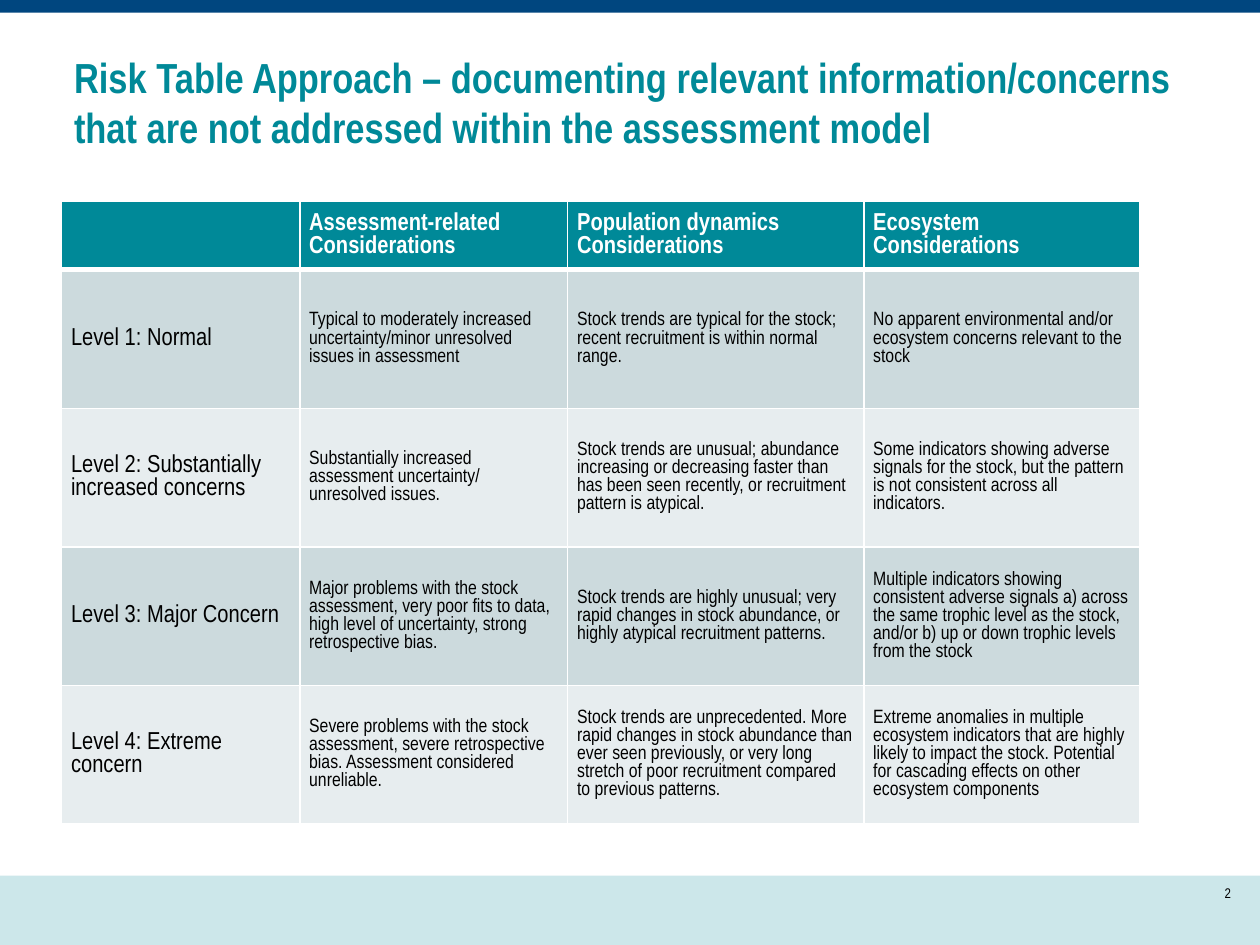
from dataclasses import dataclass

from lxml import etree
from pptx import Presentation
from pptx.dml.color import RGBColor
from pptx.enum import shapes, text
from pptx.oxml import ns
from pptx.util import Pt


@dataclass(frozen=True)
class Theme:
    font: str = "Arial Narrow"
    teal: str = "008998"
    navy: str = "00467F"
    pale: str = "CCE7EA"
    white: str = "FFFFFF"
    black: str = "000000"
    bands: tuple = ("CCDADD", "E7EDEF")
    title: float = 24
    head: float = 14
    body: float = 11
    small: float = 8


THEME = Theme()
WIDTH, HEIGHT = 720, 540
TITLE = ("Risk Table Approach – documenting relevant information/concerns "
         "that are not addressed within the assessment model")
COLS = (136.1, 153.1, 169.2, 157.7)
HEAD_ROW = 38.9
HEADS = ("", "Assessment-related Considerations",
         "Population dynamics Considerations", "Ecosystem Considerations")
LEVELS = (
    ("Level 1: Normal",
     "Typical to moderately increased uncertainty/minor unresolved issues in assessment",
     "Stock trends are typical for the stock; recent recruitment is within normal range.",
     "No apparent environmental and/or ecosystem concerns relevant to the stock"),
    ("Level 2: Substantially increased concerns",
     "Substantially increased assessment uncertainty/ unresolved issues.",
     "Stock trends are unusual; abundance increasing or decreasing faster than "
     "has been seen recently, or recruitment pattern is atypical.",
     "Some indicators showing adverse signals for the stock, but the pattern "
     "is not consistent across all indicators."),
    ("Level 3: Major Concern",
     "Major problems with the stock assessment, very poor fits to data, "
     "high level of uncertainty, strong retrospective bias.",
     "Stock trends are highly unusual; very rapid changes in stock abundance, "
     "or highly atypical recruitment patterns.",
     "Multiple indicators showing consistent adverse signals a) across the same "
     "trophic level as the stock, and/or b) up or down trophic levels from the stock"),
    ("Level 4: Extreme concern",
     "Severe problems with the stock assessment, severe retrospective bias. "
     "Assessment considered unreliable.",
     "Stock trends are unprecedented. More rapid changes in stock abundance than "
     "ever seen previously, or very long stretch of poor recruitment compared "
     "to previous patterns.",
     "Extreme anomalies in multiple ecosystem indicators that are highly likely "
     "to impact the stock. Potential for cascading effects on other ecosystem components"),
)


def points(box):
    return [Pt(side) for side in box]


def paint(fill, color):
    fill.solid()
    fill.fore_color.rgb = RGBColor.from_string(color)


def style(frame, size, color, bold=False):
    for para in frame.paragraphs:
        for run in para.runs:
            font = run.font
            font.name, font.size, font.bold = THEME.font, Pt(size), bold
            font.color.rgb = RGBColor.from_string(color)


def add_band(slide, box, color):
    band = slide.shapes.add_shape(shapes.MSO_SHAPE.RECTANGLE, *points(box))
    band.shadow.inherit = False
    paint(band.fill, color)
    band.line.fill.background()


def add_label(slide, box, words, size, color, bold=False,
              align=text.PP_ALIGN.LEFT, anchor=text.MSO_ANCHOR.TOP):
    frame = slide.shapes.add_textbox(*points(box)).text_frame
    frame.word_wrap = True
    frame.margin_left = frame.margin_right = Pt(7.2)
    frame.margin_top = frame.margin_bottom = Pt(7.2)
    frame.vertical_anchor = anchor
    frame.text = words
    frame.paragraphs[0].alignment = align
    style(frame, size, color, bold)


def add_edges(cell, widths):
    props = cell._tc.get_or_add_tcPr()
    for side, width in zip("LRTB", widths):
        line = etree.SubElement(props, ns.qn(f"a:ln{side}"), w=str(Pt(width)))
        fill = etree.SubElement(line, ns.qn("a:solidFill"))
        etree.SubElement(fill, ns.qn("a:srgbClr"), val=THEME.white)


def fill_cell(cell, words, row, col):
    head = row == 0
    add_edges(cell, (1, 1, 3 if row == 1 else 1, 3 if head else 1))
    paint(cell.fill, THEME.teal if head else THEME.bands[(row - 1) % 2])
    cell.margin_left = cell.margin_right = Pt(5.4)
    cell.margin_top = cell.margin_bottom = Pt(0)
    cell.vertical_anchor = text.MSO_ANCHOR.MIDDLE
    cell.text_frame.text = words
    size = THEME.head if head or col == 0 else THEME.body
    style(cell.text_frame, size, THEME.white if head else THEME.black, head)


def add_risks(slide, box):
    rows = (HEADS, *LEVELS)
    table = slide.shapes.add_table(len(rows), len(COLS), *points(box)).table
    table.horz_banding = False
    for column, width in zip(table.columns, COLS):
        column.width = Pt(width)
    level = (box[3] - HEAD_ROW) / len(LEVELS)
    for row, words in enumerate(rows):
        table.rows[row].height = Pt(level if row else HEAD_ROW)
        for col, entry in enumerate(words):
            fill_cell(table.cell(row, col), entry, row, col)


def add_frame(slide, box):
    left, top, width, height = box
    foot = 39.6
    add_band(slide, (left, top + height - foot, width, foot), THEME.pale)
    add_band(slide, (left, top, width, 7.2), THEME.navy)
    add_label(slide, (left + width - 52.6, top + height - 50.4, 43.2, 41),
              "2", THEME.small, THEME.black,
              align=text.PP_ALIGN.RIGHT, anchor=text.MSO_ANCHOR.MIDDLE)


def main():
    deck = Presentation()
    deck.slide_width, deck.slide_height = Pt(WIDTH), Pt(HEIGHT)
    slide = deck.slides.add_slide(deck.slide_layouts[6])
    add_frame(slide, (0, 0, WIDTH, HEIGHT))
    add_label(slide, (35.2, 22, 671, 122.4), TITLE,
              THEME.title, THEME.teal, bold=True)
    add_risks(slide, (35.2, 115.2, sum(COLS), 355.7))
    deck.save("out.pptx")


if __name__ == "__main__":
    main()
